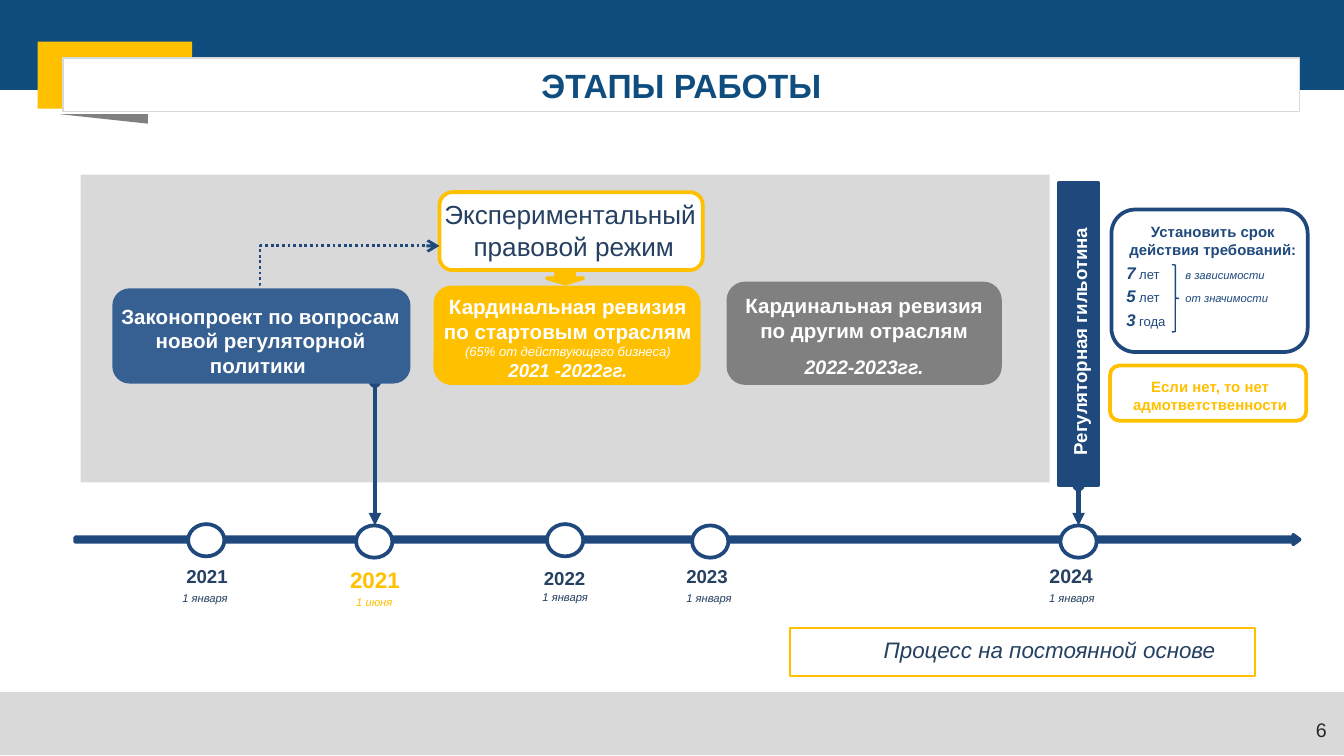
from lxml import etree
from pptx import Presentation
from pptx.dml.color import RGBColor
from pptx.enum.dml import MSO_LINE
from pptx.enum.shapes import MSO_CONNECTOR, MSO_SHAPE
from pptx.enum.text import MSO_ANCHOR, PP_ALIGN
from pptx.oxml.ns import qn
from pptx.util import Inches, Pt

RECT, ROUND, OVAL = MSO_SHAPE.RECTANGLE, MSO_SHAPE.ROUNDED_RECTANGLE, MSO_SHAPE.OVAL
TRI, BRACE = MSO_SHAPE.RIGHT_TRIANGLE, MSO_SHAPE.RIGHT_BRACE
DOWN, RIGHT = MSO_SHAPE.DOWN_ARROW, MSO_SHAPE.RIGHT_ARROW
STRAIGHT, ELBOW = MSO_CONNECTOR.STRAIGHT, MSO_CONNECTOR.ELBOW
MID, TOP = MSO_ANCHOR.MIDDLE, MSO_ANCHOR.TOP
LEFT, CENTER, END = PP_ALIGN.LEFT, PP_ALIGN.CENTER, PP_ALIGN.RIGHT
DOTS = MSO_LINE.ROUND_DOT

WHITE = RGBColor(0xFF, 0xFF, 0xFF)
BLUE = RGBColor(0x10, 0x4D, 0x7F)
NAVY = RGBColor(0x1F, 0x49, 0x7D)
STEEL = RGBColor(0x37, 0x60, 0x92)
INK = RGBColor(0x25, 0x40, 0x61)
GOLD = RGBColor(0xFF, 0xC0, 0x00)
GRAY = RGBColor(0x80, 0x80, 0x80)
PALE = RGBColor(0xD9, 0xD9, 0xD9)
DARK = RGBColor(0x26, 0x26, 0x26)

# Content: a paragraph is a list of runs (text, size, style)
TITLE = [[("ЭТАПЫ РАБОТЫ", 18, "b")]]
MODE = [[("Экспериментальный ", 14, "")], [("правовой режим", 14, "")]]
BILL = [[("Законопроект по вопросам новой регуляторной политики ", 11, "b")]]
START = [[("Кардинальная ревизия по стартовым отраслям ", 11, "b"),
          ("(65% от действующего бизнеса)", 7, "i")],
         [("2021 -2022гг.", 10, "bi")]]
OTHER = [[("Кардинальная ревизия по другим отраслям", 11, "b")],
         [("2022-2023гг.", 10.5, "bi")]]
GATE = [[("Регуляторная гильотина", 10, "b")]]
FINE = [[("Если нет, то нет адмответственности ", 8, "b")]]
TERM = [[("Установить срок действия требований:", 8, "b")]]
TERMS = [("7", "лет", "в зависимости"), ("5", "лет", "от значимости"), ("3", "года", "")]
ALWAYS = [[("Процесс на постоянной основе", 12, "i")]]
PAGE = [[("6", 10.5, "")]]

# Circle left and top, year with size and box, date with place, colour
STONES = [
    (1.40, 3.90, "2021", 10, (1.38, 4.20, 0.32, 0.17), "1 января", (1.35, 4.40), INK),
    (2.65, 3.91, "2021", 12, (2.57, 4.21, 0.44, 0.20), "1 июня", (2.61, 4.43), GOLD),
    (4.07, 3.90, "2022", 10, (4.04, 4.22, 0.32, 0.17), "1 января", (4.03, 4.39), INK),
    (5.15, 3.91, "2023", 10, (5.10, 4.20, 0.32, 0.17), "1 января", (5.10, 4.40), INK),
    (7.89, 3.91, "2024", 10.5, (7.80, 4.19, 0.34, 0.18), "1 января", (7.80, 4.40), INK),
]

deck = Presentation()
deck.slide_width, deck.slide_height = Inches(10), Inches(10 * 9 / 16)
slide = deck.slides.add_slide(deck.slide_layouts[6])
shapes = slide.shapes


def shape(kind, box, fill=None, line=None, width=2):
    item = shapes.add_shape(kind, *map(Inches, box))
    item.shadow.inherit = False
    if fill is None:
        item.fill.background()
    else:
        item.fill.solid()
        item.fill.fore_color.rgb = fill
    if line is None:
        item.line.fill.background()
    else:
        item.line.color.rgb = line
        item.line.width = Pt(width)
    return item


def style(font, size, marks):
    font.size = Pt(size)
    font.bold, font.italic = "b" in marks, "i" in marks


def write(frame, paras, color, align=CENTER, before=0):
    for i, runs in enumerate(paras):
        para = frame.add_paragraph() if i else frame.paragraphs[0]
        para.alignment = align
        para.space_before = Pt(before)
        para.font.name = "Arial"
        para.font.color.rgb = color
        if len(runs) == 1:
            style(para.font, *runs[0][1:])
        for words, size, marks in runs:
            run = para.add_run()
            run.text = words
            if len(runs) > 1:
                style(run.font, size, marks)


def text(box, paras, color, align=CENTER, before=0, wrap=True, anchor=TOP, pad=0):
    item = shapes.add_textbox(*map(Inches, box))
    frame = item.text_frame
    frame.word_wrap, frame.vertical_anchor = wrap, anchor
    frame.margin_left = frame.margin_right = Inches(pad)
    frame.margin_top = frame.margin_bottom = Inches(pad / 2)
    write(frame, paras, color, align, before)
    return item


def link(kind, start, end, width, tail, head=None, dash=None):
    item = shapes.add_connector(kind, *map(Inches, start + end))
    item.line.color.rgb = NAVY
    item.line.width = Pt(width)
    if dash:
        item.line.dash_style = dash
    line = item.line._get_or_add_ln()
    for tag, form in (("a:headEnd", head), ("a:tailEnd", tail)):
        if form:
            etree.SubElement(line, qn(tag), type=form)
    etree.SubElement(item._element.spPr, qn("a:effectLst"))
    return item


# Header
shape(RECT, (0.6, 1.3, 7.21, 2.29), PALE)
shape(RECT, (0, 0, 10, 0.67), BLUE)
shape(RECT, (0.28, 0.31, 1.15, 0.5), GOLD)
title = shape(RECT, (0.47, 0.43, 9.2, 0.4), WHITE, PALE, 1)
write(title.text_frame, TITLE, BLUE)
shape(TRI, (0.45, 0.85, 0.65, 0.07), GRAY).rotation = 180

# Time axis
axis = shape(RIGHT, (0.56, 3.98, 9.11, 0.07), NAVY, NAVY)
axis.adjustments[1] = 0.67
link(STRAIGHT, (2.79, 2.84), (2.79, 3.91), 2.25, "triangle", "oval")

# Stages
shape(ROUND, (3.27, 1.43, 1.96, 0.58), WHITE, GOLD)
text((3.29, 1.48, 1.96, 0.47), MODE, INK)
shape(DOWN, (4.07, 2.03, 0.27, 0.08), GOLD, GOLD)
shape(ROUND, (0.85, 2.16, 2.19, 0.68), STEEL, STEEL)
shape(ROUND, (3.24, 2.14, 1.96, 0.71), GOLD, GOLD)
shape(ROUND, (5.42, 2.11, 2.02, 0.74), GRAY, GRAY)
text((0.84, 2.26, 2.2, 0.56), BILL, WHITE)
text((3.27, 2.19, 1.91, 0.66), START, WHITE)
other = text((5.49, 2.18, 1.88, 0.65), OTHER, WHITE)
other.text_frame.paragraphs[1].space_before = Pt(7)
bend = link(ELBOW, (1.93, 2.12), (3.27, 1.83), 1.5, "arrow", dash=DOTS)
guides = bend._element.spPr.find(qn("a:prstGeom")).get_or_add_avLst()
etree.SubElement(guides, qn("a:gd"), name="adj1", fmla="val 400")

# Gate
gate = shape(RECT, (7.88, 1.36, 0.29, 2.25), NAVY, NAVY, 2.25)
label = text((7.95, 1.62, 0.17, 1.84), GATE, WHITE)
label._element.txBody.bodyPr.set("vert", "vert270")

# Terms and liability
shape(ROUND, (8.27, 1.56, 1.46, 1.06), WHITE, NAVY)
rows = [[(num, 9, "bi"), (f" {unit}", 7, "")] + ([(f"\t{note}", 6, "i")] if note else [])
        for num, unit, note in TERMS]
terms = text((8.38, 1.66, 1.29, 0.81), TERM + rows, NAVY, LEFT, 1.8)
lines = terms.text_frame.paragraphs
lines[0].alignment = CENTER
for para in lines[1:]:
    tabs = etree.Element(qn("a:tabLst"))
    etree.SubElement(tabs, qn("a:tab"), pos=str(Inches(0.44)), algn="l")
    para._p.pPr.find(qn("a:defRPr")).addprevious(tabs)
shape(BRACE, (8.72, 1.97, 0.05, 0.5), None, NAVY, 0.75)
shape(ROUND, (8.26, 2.72, 1.46, 0.41), WHITE, GOLD)
text((8.42, 2.81, 1.17, 0.27), FINE, GOLD, before=1.6)

# Milestones
for left, top, year, size, box, date, place, color in STONES:
    stone = shape(OVAL, (left, top, 0.27, 0.24), WHITE, NAVY)
    text(box, [[(year, size, "b")]], color, wrap=False, anchor=MID)
    text((*place, 0.35, 0.1), [[(date, 6, "i")]], color, wrap=False, anchor=MID)
drop = link(STRAIGHT, (8.03, 3.61), (8.03, 3.91), 2.25, "triangle", "oval")
drop.begin_connect(gate, 2)
drop.end_connect(stone, 0)

# Footer
shape(RECT, (0, 5.15, 10, 0.47), PALE)
text((7.64, 5.29, 2.33, 0.3), PAGE, DARK, END, pad=0.1)
shape(RECT, (5.88, 4.67, 3.46, 0.36), None, GOLD, 1)
text((6.35, 4.73, 2.92, 0.2), ALWAYS, INK)

deck.save("out.pptx")
